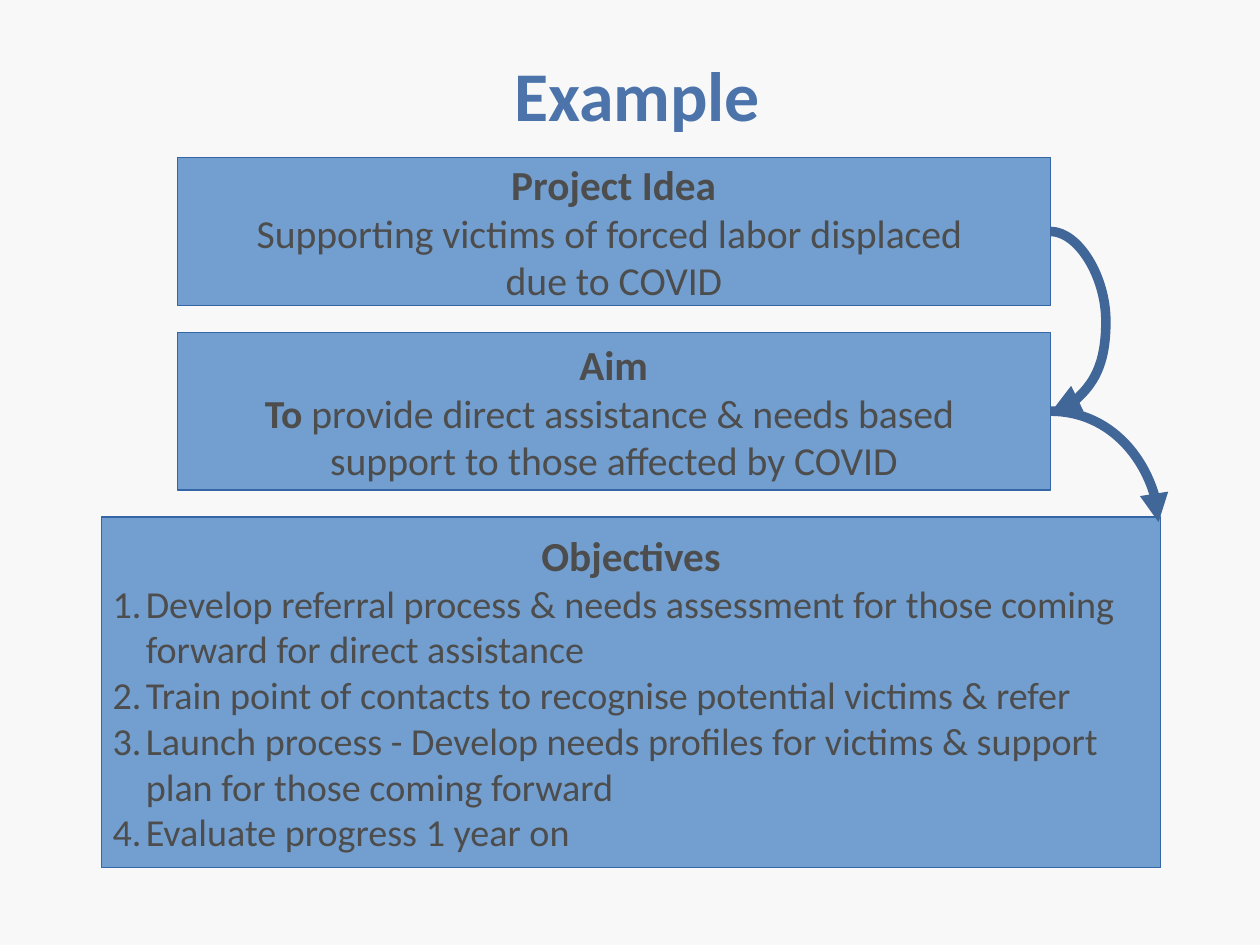
from dataclasses import dataclass

from lxml.etree import SubElement
from pptx import Presentation
from pptx.dml.color import RGBColor
from pptx.enum.shapes import MSO_CONNECTOR, MSO_SHAPE
from pptx.enum.text import MSO_ANCHOR, PP_ALIGN
from pptx.oxml.ns import qn
from pptx.slide import Slide
from pptx.text.text import TextFrame, _Paragraph, _Run
from pptx.util import Cm, Inches, Pt

WIDTH, HEIGHT = Cm(28), Cm(21)
COLOURS = {"page": "F8F8F8", "title": "4C74AA", "fill": "729FCF",
           "edge": "3465A4", "text": "4D4D4D", "arrow": "416698"}
FIRST_TOP, GAP = 16.66, 2.85
NUMBER_INDENT = Inches(0.29)


@dataclass
class Line:
    text: str
    size: int
    lead: str = ""
    bold: bool = False
    numbered: bool = False


@dataclass
class Panel:
    left: float
    width: float
    height: float
    lines: list[Line]


@dataclass
class Curve:
    start: tuple[float, float]
    end: tuple[float, float]
    preset: str
    bulge: int | None = None


def heading(text: str) -> Line:
    return Line(text, 26, bold=True)


def objective(text: str) -> Line:
    return Line(text, 24, numbered=True)


PANELS = [
    Panel(14.07, 69.3, 15.66, [
        heading("Project Idea"),
        Line("Supporting victims of forced labor displaced \vdue to COVID", 25)]),
    Panel(14.07, 69.3, 16.69, [
        heading("Aim"),
        Line(" provide direct assistance & needs based \v"
             "support to those affected by COVID", 25, lead="To")]),
    Panel(8.05, 84.07, 37.12, [
        heading("Objectives"),
        objective("Develop referral process & needs assessment for those coming \v"
                  "forward for direct assistance"),
        objective("Train point of contacts to recognise potential victims & refer"),
        objective("Launch process - Develop needs profiles for victims & support \v"
                  "plan for those coming forward"),
        objective("Evaluate progress 1 year on")]),
]


def across(share: float) -> int:
    return round(WIDTH * share / 100)


def down(share: float) -> int:
    return round(HEIGHT * share / 100)


def colour(name: str) -> RGBColor:
    return RGBColor.from_string(COLOURS[name])


def style_span(span: _Run, size: int, bold: bool, tint: str) -> None:
    span.font.name, span.font.size, span.font.bold = "Calibri", Pt(size), bold
    span.font.color.rgb = colour(tint)


def write_line(para: _Paragraph, line: Line, tint: str) -> None:
    para.text = line.text
    para.alignment = PP_ALIGN.LEFT if line.numbered else PP_ALIGN.CENTER
    for span in para.runs:
        style_span(span, line.size, line.bold, tint)
    if line.lead:
        lead = para.add_run()
        lead.text = line.lead
        style_span(lead, line.size, True, tint)
        para.runs[0]._r.addprevious(lead._r)
    if line.numbered:
        properties = para._p.get_or_add_pPr()
        properties.set("marL", str(NUMBER_INDENT))
        properties.set("indent", str(-NUMBER_INDENT))
        SubElement(properties, qn("a:buAutoNum"), type="arabicPeriod")


def write_lines(frame: TextFrame, lines: list[Line], tint: str) -> None:
    frame.vertical_anchor = MSO_ANCHOR.MIDDLE
    frame.word_wrap = False
    for index, line in enumerate(lines):
        para = frame.add_paragraph() if index else frame.paragraphs[0]
        write_line(para, line, tint)


def draw_title(page: Slide) -> None:
    box = page.shapes.add_textbox(across(5.58), down(4), across(90), down(11.73))
    write_lines(box.text_frame, [Line("Example", 44, bold=True)], "title")
    box.text_frame.word_wrap = True


def draw_panel(page: Slide, panel: Panel, top: float) -> None:
    box = page.shapes.add_shape(MSO_SHAPE.RECTANGLE, across(panel.left), down(top),
                                across(panel.width), down(panel.height))
    box.shadow.inherit = False
    box.fill.solid()
    box.fill.fore_color.rgb = colour("fill")
    box.line.color.rgb = colour("edge")
    box.line.width = Pt(0)
    write_lines(box.text_frame, panel.lines, "text")


def draw_curve(page: Slide, curve: Curve) -> None:
    arrow = page.shapes.add_connector(
        MSO_CONNECTOR.CURVE, across(curve.start[0]), down(curve.start[1]),
        across(curve.end[0]), down(curve.end[1]))
    arrow.line.color.rgb = colour("arrow")
    arrow.line.width = Pt(6)
    SubElement(arrow.line._get_or_add_ln(), qn("a:tailEnd"), type="triangle")
    properties = arrow._element.spPr
    SubElement(properties, qn("a:effectLst"))
    geometry = properties.find(qn("a:prstGeom"))
    geometry.set("prst", curve.preset)
    if curve.bulge is not None:
        SubElement(geometry.find(qn("a:avLst")), qn("a:gd"),
                   name="adj1", fmla=f"val {curve.bulge}")


def main() -> None:
    """Build the slide that leads from project idea to aim to objectives."""
    deck = Presentation()
    deck.slide_width, deck.slide_height = WIDTH, HEIGHT
    page = deck.slides.add_slide(deck.slide_layouts[6])
    page.background.fill.solid()
    page.background.fill.fore_color.rgb = colour("page")
    draw_title(page)

    top = FIRST_TOP
    middles = []
    for panel in PANELS:
        draw_panel(page, panel, top)
        middles.append(top + panel.height / 2)
        top += panel.height + GAP

    edge = PANELS[0].left + PANELS[0].width
    idea, aim = middles[:2]
    for curve in (
        Curve((edge, idea), (edge + 0.1, aim), "curvedConnector3", 4400000),
        Curve((edge, aim), (91.95, 55.26), "curvedConnector2"),
    ):
        draw_curve(page, curve)
    deck.save("out.pptx")


if __name__ == "__main__":
    main()
